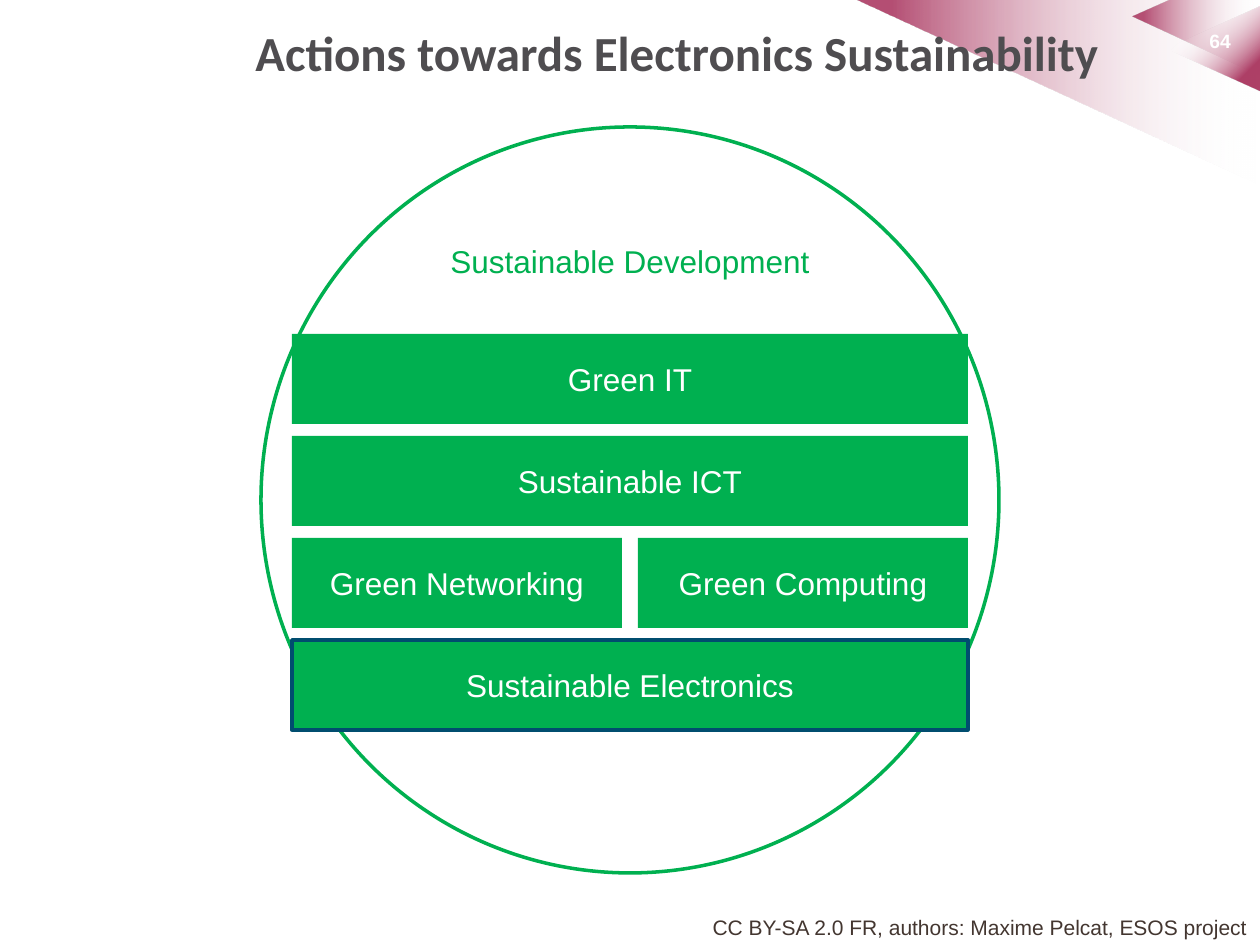
from lxml import etree
from pptx import Presentation
from pptx import util as u
from pptx.dml.color import RGBColor
from pptx.enum import shapes, text
from pptx.oxml.ns import qn

PX = 914400 / 126  # EMU in one px
GREEN = RGBColor(0x00, 0xB0, 0x50)
NAVY = RGBColor(0x00, 0x4D, 0x6F)
CRIMSON = RGBColor(0x9D, 0x17, 0x47)
WHITE = RGBColor(0xFF, 0xFF, 0xFF)
GREY = RGBColor(0x4F, 0x4D, 0x50)
BROWN = RGBColor(0x43, 0x36, 0x30)


def px(*lengths):
    return [round(length * PX) for length in lengths]


def write(box, words, size=18, font="Arial", color=WHITE, bold=False,
          align=text.PP_ALIGN.CENTER, anchor=text.MSO_ANCHOR.MIDDLE, wrap=True):
    frame = box.text_frame
    frame.word_wrap = wrap
    frame.vertical_anchor = anchor
    para = frame.paragraphs[0]
    para.alignment = align
    span = para.add_run()
    span.text = words
    span.font.size = u.Pt(size)
    span.font.name = font
    span.font.bold = bold
    span.font.color.rgb = color


class Page:
    """The current slide and the ways to draw on it."""

    def __init__(self, deck):
        self.shapes = deck.slides.add_slide(deck.slide_layouts[6]).shapes

    def label(self, left, top, width, height, words, **style):
        box = self.shapes.add_textbox(*px(left, top, width, height))
        write(box, words, anchor=style.pop("anchor", text.MSO_ANCHOR.TOP), **style)

    def shape(self, kind, left, top, width, height, fill=None, line=None):
        shape = self.shapes.add_shape(kind, *px(left, top, width, height))
        shape.shadow.inherit = False
        if fill is None:
            shape.fill.background()
        else:
            shape.fill.solid()
            shape.fill.fore_color.rgb = fill
        if line is None:
            shape.line.fill.background()
        else:
            shape.line.color.rgb = line
            shape.line.width = u.Pt(2)
        return shape

    def bar(self, left, top, width, height, words, line=None):
        box = self.shape(shapes.MSO_SHAPE.RECTANGLE, left, top, width, height, GREEN, line)
        write(box, words)

    def polygon(self, points):
        builder = self.shapes.build_freeform(*points[0], scale=PX)
        builder.add_line_segments(points[1:], close=True)
        shape = builder.convert_to_shape()
        shape.shadow.inherit = False
        shape.line.fill.background()
        return shape

    def fade(self, shape, stops, angle):
        """Fill with a gradient; stops are (position %, colour, opacity %)."""
        shape.fill.gradient()
        gradient = shape.fill._xPr.find(qn("a:gradFill"))
        gradient.set("rotWithShape", "1")
        for child in list(gradient):
            gradient.remove(child)
        stop_list = etree.SubElement(gradient, qn("a:gsLst"))
        for position, color, opacity in stops:
            stop = etree.SubElement(stop_list, qn("a:gs"), pos=str(position * 1000))
            tint = etree.SubElement(stop, qn("a:srgbClr"), val=str(color))
            etree.SubElement(tint, qn("a:alpha"), val=str(opacity * 1000))
        etree.SubElement(gradient, qn("a:lin"), ang=str(angle * 60000), scaled="0")


def main():
    deck = Presentation()
    deck.slide_width, deck.slide_height = px(1260, 945)
    page = Page(deck)

    # Corner decoration
    band = page.polygon([(1260, 185), (856, 0), (1260, 0)])
    page.fade(band, [(9, CRIMSON, 75), (99, WHITE, 0)], 0)
    wedge = page.polygon([(1260, 76), (1133, 17), (1171, 0), (1260, 0)])
    page.fade(wedge, [(9, CRIMSON, 73), (99, WHITE, 0)], 0)
    triangle = page.shape(shapes.MSO_SHAPE.ISOSCELES_TRIANGLE, 1171, 1, 86, 95)
    triangle.rotation = 270
    page.fade(triangle, [(27, WHITE, 0), (81, CRIMSON, 82)], 135)

    # Page number, credit and title
    page.label(1197, 23, 63, 50, "64", size=11, bold=True, align=text.PP_ALIGN.LEFT)
    page.label(694, 908, 566, 38, "CC BY-SA 2.0 FR, authors: Maxime Pelcat, ESOS project",
               size=12, color=BROWN, align=text.PP_ALIGN.RIGHT, wrap=False)
    page.label(243, 13, 891, 78, "Actions towards Electronics Sustainability",
               size=28, font="Calibri", color=GREY, bold=True,
               align=text.PP_ALIGN.LEFT, anchor=text.MSO_ANCHOR.MIDDLE)

    # Surrounding circle
    circle = page.shape(shapes.MSO_SHAPE.OVAL, 261, 127, 738, 746, line=GREEN)
    write(circle, "Sustainable Development", color=GREEN, anchor=text.MSO_ANCHOR.TOP)

    # Stacked bars, each row shared equally
    left, top, full, height, pitch, gap = 292, 334, 676, 90, 102, 16
    rows = [
        (["Green IT"], None),
        (["Sustainable ICT"], None),
        (["Green Networking", "Green Computing"], None),
        (["Sustainable Electronics"], NAVY),
    ]
    for row, (names, line) in enumerate(rows):
        width = (full - gap * (len(names) - 1)) // len(names)
        for column, name in enumerate(names):
            page.bar(left + column * (width + gap), top + row * pitch,
                     width, height, name, line)

    deck.save("out.pptx")


if __name__ == "__main__":
    main()
